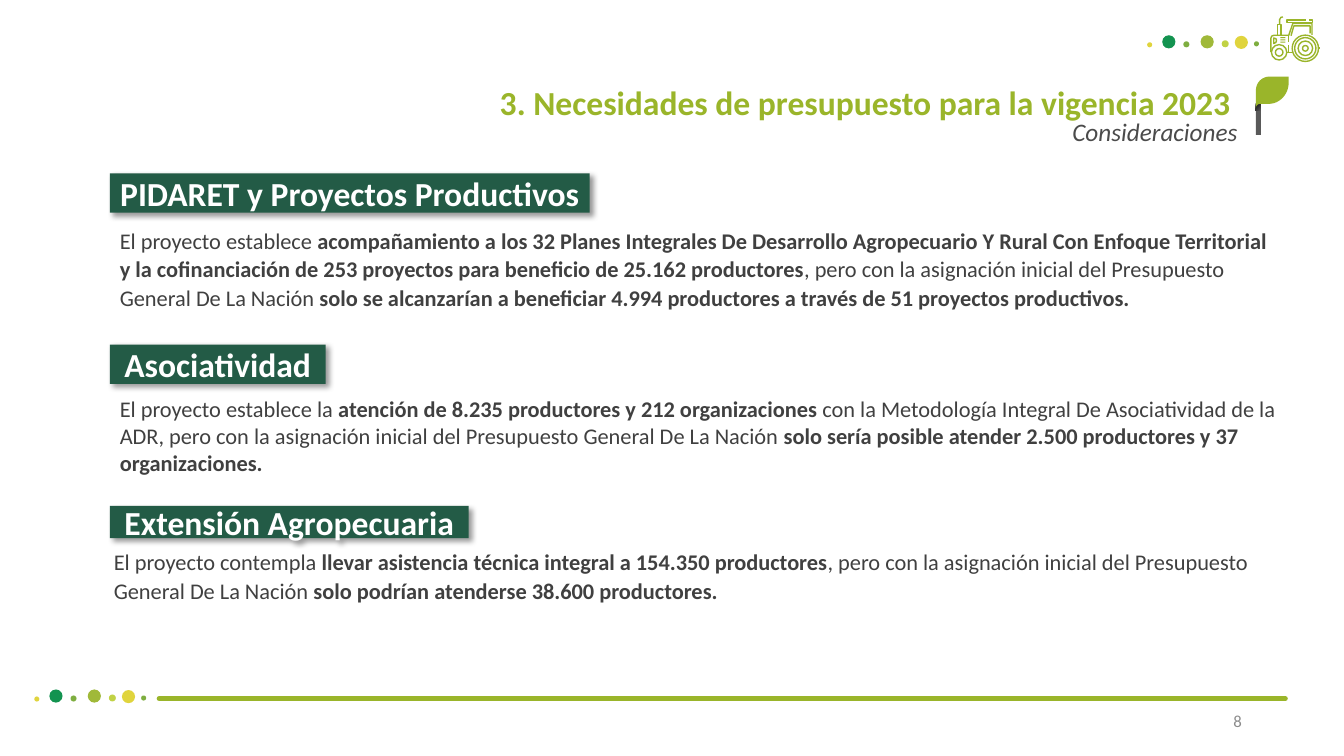
import pptx
import pptx.util
import pptx.dml.color
import pptx.enum.shapes
import pptx.enum.text
import pptx.oxml.ns
import lxml.etree
from dataclasses import dataclass

Pt = pptx.util.Pt
KIND = pptx.enum.shapes.MSO_SHAPE
ALIGN = pptx.enum.text.PP_ALIGN
MID = pptx.enum.text.MSO_ANCHOR.MIDDLE
GROW = pptx.enum.text.MSO_AUTO_SIZE.SHAPE_TO_FIT_TEXT
qn = pptx.oxml.ns.qn


@dataclass(frozen=True)
class Theme:
    """Colours and type sizes of the slide."""
    font: str = "Calibri"
    lime: str = "9AB52A"
    pine: str = "235B46"
    white: str = "FFFFFF"
    ink: str = "404040"
    soft: str = "4B4B4B"
    pale: str = "8C8C8C"
    stem: str = "595959"
    dark: str = "0D0D0D"
    dots: tuple = ("E0D43D", "139350", "7EAE40", "A0B939", "C1D245", "E0D43D", "7EAE40")
    head: int = 24
    sub: int = 18
    body: int = 16
    page: int = 12


THEME = Theme()
DOTS = [(0, 5, 3.6), (10.8, 0, 9.4), (25.9, 4.3, 4.3), (38.2, 0, 9.4),
        (53.3, 3.6, 5), (62.6, 0.4, 9.4), (76.3, 4.3, 3.6)]
WHEELS = [(25.2, 23, 9.4), (25.2, 23, 7.6), (25.2, 23, 5.2), (25.2, 23, 2),
          (6.5, 25.9, 5.5), (6.5, 25.9, 2.7)]
FRAME = [
    [(0.6, 25.5), (0.6, 15.8), (1.2, 14.3), (2.8, 13.7), (13.4, 13.7), (16.2, 5.3), (30, 5.3), (30, 13.4)],
    [(15, 14), (17, 7), (28.6, 7), (28.6, 12.4)],
    [(28, 2.8), (30.4, 2.8), (30.4, 4.6), (12.2, 4.6), (12.2, 2.8), (26, 2.8)],
    [(9.2, 0.6), (7.8, 0.9), (6.8, 2.5), (6.8, 6)],
    [(5.4, 13.5), (5.4, 6.2), (7.9, 6.2), (7.9, 13.5)],
    [(13.4, 20.5), (13.4, 25.9)], [(13.4, 14), (13.4, 18.6)],
    [(12.2, 25.9), (16.3, 25.9)], [(34.8, 22.9), (36, 22.9)],
    [(2.6, 15.7), (2.6, 19.6), (4.2, 18.8), (4.6, 17.5), (4.2, 16.2), (2.6, 15.7)],
]
ITEMS = [
    ("PIDARET y Proyectos Productivos", (78.5, 123.8, 342.7, 28.1), (78.5, 157, 841.7, 68.4), 1.07,
     ["El proyecto establece ",
      "acompañamiento a los 32 Planes Integrales De Desarrollo Agropecuario Y Rural Con Enfoque "
      "Territorial y la cofinanciación de 253 proyectos para beneficio de 25.162 productores",
      ", pero con la asignación inicial del Presupuesto General De La Nación ",
      "solo se alcanzarían a beneficiar 4.994 productores a través de 51 proyectos productivos."]),
    ("Asociatividad", (78.5, 246.2, 154.1, 28.1), (78.5, 278.6, 841.7, 65.5), None,
     ["El proyecto establece la ",
      "atención de 8.235 productores y 212 organizaciones",
      " con la Metodología Integral De Asociatividad de la ADR, pero con la asignación inicial del "
      "Presupuesto General De La Nación ",
      "solo sería posible atender 2.500 productores y 37 organizaciones."]),
    ("Extensión Agropecuaria", (78.5, 361.4, 256.3, 23), (74.2, 386.6, 841.7, 47.5), 1.07,
     ["El proyecto contempla ",
      "llevar asistencia técnica integral a 154.350 productores",
      ", pero con la asignación inicial del Presupuesto General De La Nación ",
      "solo podrían atenderse 38.600 productores."]),
]


def tint(hue):
    """Turn a hex string into a colour."""
    return pptx.dml.color.RGBColor.from_string(hue)


def paint(shape, fill=None, line=None):
    """Set fill, line and no shadow."""
    shape.shadow.inherit = False
    if fill:
        shape.fill.solid()
        shape.fill.fore_color.rgb = tint(fill)
    else:
        shape.fill.background()
    if line:
        shape.line.color.rgb = tint(line)
        shape.line.width = Pt(1)
    else:
        shape.line.fill.background()
    return shape


def form(slide, kind, box, fill=None, line=None):
    """Add a preset shape in a box."""
    return paint(slide.shapes.add_shape(kind, *map(Pt, box)), fill, line)


def trace(slide, left, top, spots, close, fill=None, line=None):
    """Add an outline through spots given from a corner."""
    spots = [(100 * (left + x), 100 * (top + y)) for x, y in spots]
    pen = slide.shapes.build_freeform(*spots[0], scale=Pt(1) / 100)
    pen.add_line_segments(spots[1:], close=close)
    return paint(pen.convert_to_shape(), fill, line)


def bend(*knots):
    """Give spots along a cubic curve."""
    def mix(t, axis):
        a, b, c, d = (knot[axis] for knot in knots)
        u = 1 - t
        return u**3 * a + 3 * u * u * t * b + 3 * u * t * t * c + t**3 * d
    return [(mix(i / 12, 0), mix(i / 12, 1)) for i in range(13)]


def style(run, size, hue, bold=False, slant=False):
    """Set the font of a run."""
    font = run.font
    font.name, font.size, font.bold, font.italic = THEME.font, Pt(size), bold, slant
    font.color.rgb = tint(hue)


def label(slide, box, text, size, hue, bold=False, slant=False, wrap=True):
    """Add a one-run text box."""
    frame = slide.shapes.add_textbox(*map(Pt, box)).text_frame
    frame.word_wrap = wrap
    frame.text = text
    style(frame.paragraphs[0].runs[0], size, hue, bold, slant)
    return frame


def dots(slide, left, top):
    """Draw the row of seven dots."""
    for (x, y, size), hue in zip(DOTS, THEME.dots):
        form(slide, KIND.OVAL, (left + x, top + y, size, size), hue)


def tractor(slide, left, top):
    """Draw the line tractor."""
    for part in FRAME:
        trace(slide, left, top, part, False, line=THEME.lime)
    for x, y, r in WHEELS:
        form(slide, KIND.OVAL, (left + x - r, top + y - r, 2 * r, 2 * r), line=THEME.lime)
    for row in range(3):
        form(slide, KIND.RECTANGLE, (left + 7.4, top + 15 + 1.6 * row, 3.6, 0.8), THEME.lime)


def leaf(slide, left, top):
    """Draw the leaf on its stem."""
    stem = form(slide, KIND.ROUND_1_RECTANGLE, (left, top + 18.7, 3.6, 23), THEME.stem)
    stem.element.spPr.xfrm.set("flipH", "1")
    shade = form(slide, KIND.RECTANGLE, (left, top + 18.7, 3.6, 5.8), THEME.stem)
    shade.fill.gradient()
    shade.fill.gradient_angle = 315
    for stop, hue in zip(shade.fill.gradient_stops, (THEME.dark, THEME.stem)):
        stop.color.rgb = tint(hue)
    edge = (bend((10.1, 0), (4.3, 0), (0, 4.3), (0, 10))
            + bend((0, 22.5), (0, 21), (1.4, 19.5), (2.9, 19.5))
            + bend((9.4, 19.5), (16.6, 19.5), (23.4, 13), (23.4, 4.3)) + [(23.4, 0)])
    trace(slide, left, top, edge, True, THEME.lime)


def header(slide, left, top):
    """Place the title, its subtitle and the leaf."""
    title = label(slide, (left, top, 544.3, 36), "3. Necesidades de presupuesto para la vigencia 2023",
                  THEME.head, THEME.lime, bold=True)
    title.auto_size = GROW
    sub = label(slide, (left + 409, top + 24.5, 135.4, 28.8), "Consideraciones",
                THEME.sub, THEME.soft, slant=True, wrap=False)
    sub.auto_size = GROW
    leaf(slide, left + 547.2, top)


def tag(slide, box, text):
    """Add a green heading with a soft shadow."""
    shape = form(slide, KIND.RECTANGLE, box, THEME.pine)
    glow = shape.element.spPr.find(qn("a:effectLst"))
    cast = lxml.etree.SubElement(glow, qn("a:outerShdw"), blurRad=str(Pt(4)), dist=str(Pt(3)),
                                 dir="2700000", algn="tl", rotWithShape="0")
    hue = lxml.etree.SubElement(cast, qn("a:srgbClr"), val="000000")
    lxml.etree.SubElement(hue, qn("a:alpha"), val="40000")
    frame = shape.text_frame
    frame.word_wrap = False
    frame.vertical_anchor = MID
    frame.text = text
    frame.paragraphs[0].alignment = ALIGN.CENTER
    style(frame.paragraphs[0].runs[0], THEME.head, THEME.white, True)


def item(slide, name, bar, box, pitch, parts):
    """Add a heading and its text, every second part bold."""
    tag(slide, bar, name)
    frame = slide.shapes.add_textbox(*map(Pt, box)).text_frame
    frame.word_wrap = True
    frame.auto_size = GROW
    para = frame.paragraphs[0]
    if pitch:
        para.line_spacing = pitch
        para.space_after = Pt(8)
    for i, part in enumerate(parts):
        run = para.add_run()
        run.text = part
        style(run, THEME.body, THEME.ink, i % 2 == 1)


def footer(slide, left, top):
    """Draw the dots, the rule and the page number."""
    dots(slide, left, top)
    ends = map(Pt, (left + 89.3, top + 6.5, left + 893.5, top + 6.5))
    rule = slide.shapes.add_connector(pptx.enum.shapes.MSO_CONNECTOR.STRAIGHT, *ends)
    rule.line.color.rgb = tint(THEME.lime)
    rule.line.width = Pt(3.75)
    rule.line._get_or_add_ln().set("cap", "rnd")
    lxml.etree.SubElement(rule._element.spPr, qn("a:effectLst"))
    frame = label(slide, (left + 653.7, top + 7.9, 216, 28.8), "8", THEME.page, THEME.pale)
    frame.vertical_anchor = MID
    frame.paragraphs[0].alignment = ALIGN.RIGHT


def main():
    """Build and save the slide."""
    deck = pptx.Presentation()
    deck.slide_width, deck.slide_height = Pt(960), Pt(540)
    slide = deck.slides.add_slide(deck.slide_layouts[6])
    dots(slide, 819.4, 25.2)
    tractor(slide, 907.2, 11.5)
    for entry in ITEMS:
        item(slide, *entry)
    footer(slide, 24.5, 492.5)
    header(slide, 349.9, 54.7)
    deck.save("out.pptx")


if __name__ == "__main__":
    main()
